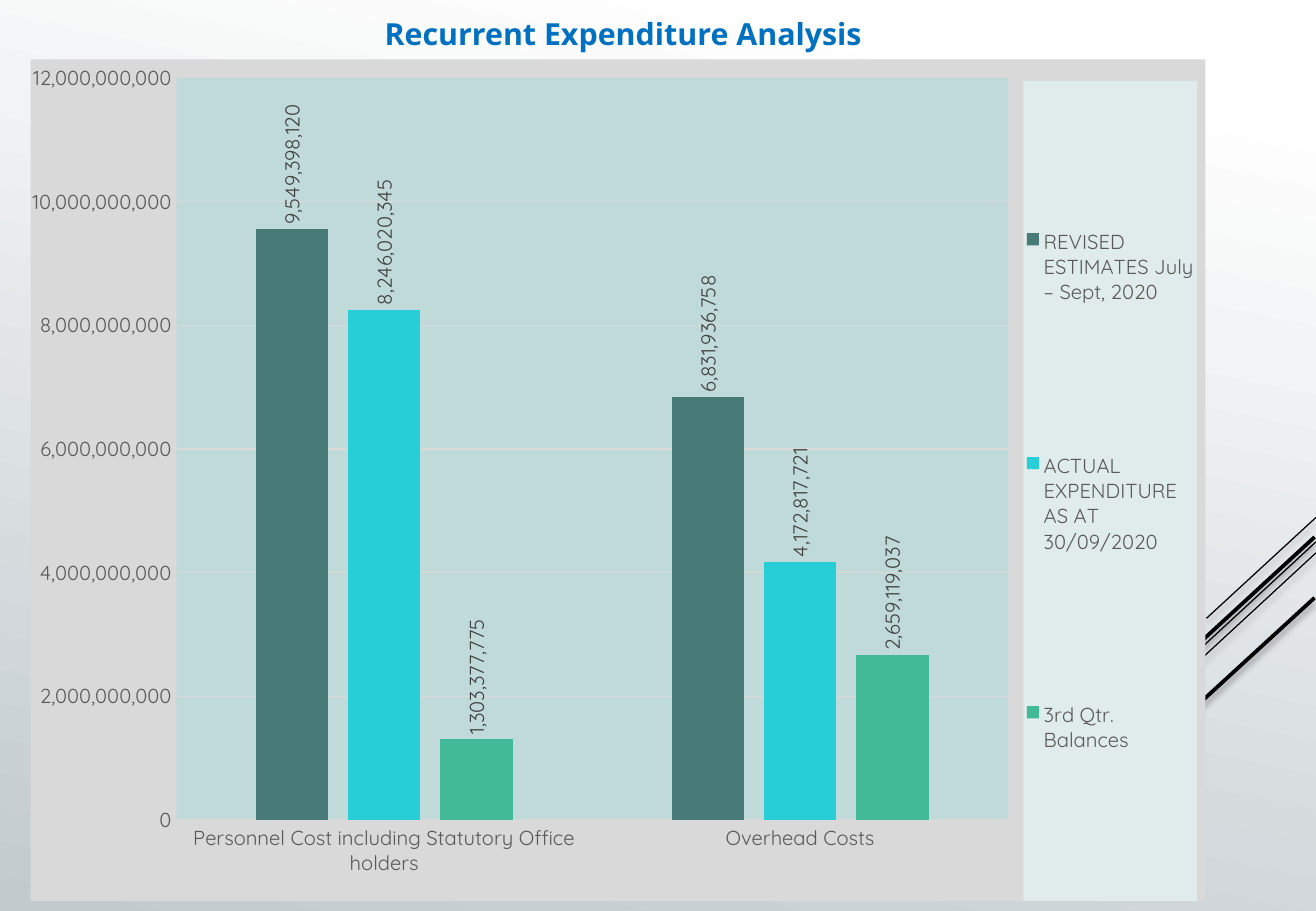
from lxml import etree
from pptx import Presentation
from pptx.chart.data import CategoryChartData
from pptx.dml.color import RGBColor
from pptx.enum.chart import (XL_CHART_TYPE, XL_LABEL_POSITION,
                             XL_LEGEND_POSITION, XL_TICK_MARK)
from pptx.enum.shapes import MSO_CONNECTOR
from pptx.oxml import parse_xml
from pptx.oxml.ns import nsdecls, qn
from pptx.util import Cm, Pt

COLUMNS = XL_CHART_TYPE.COLUMN_CLUSTERED
OUTSIDE_END = XL_LABEL_POSITION.OUTSIDE_END
LEGEND_RIGHT = XL_LEGEND_POSITION.RIGHT
NO_TICK = XL_TICK_MARK.NONE
STRAIGHT = MSO_CONNECTOR.STRAIGHT

COLORS = {k: RGBColor.from_string(v) for k, v in {
    "white": "FFFFFF", "mist": "C2CACE", "black": "000000",
    "title": "0070C0", "axis_text": "595959", "label_text": "404040",
    "rule": "D9D9D9", "plot": "C0DAD9", "legend": "E0ECEB",
    "revised": "487B78", "actual": "27CED7", "balance": "42BA97",
}.items()}
CHART_FONT = "Quicksand"
NUMBER_FORMAT = "#,##0"


def set_font(font, size, color, name=CHART_FONT, bold=False):
    font.size, font.name, font.bold = Pt(size), name, bold
    font.color.rgb = COLORS[color]


def add_text(slide, text, left, top, width, height, **fmt):
    tf = slide.shapes.add_textbox(Cm(left), Cm(top), Cm(width), Cm(height)).text_frame
    tf.word_wrap = True
    r = tf.paragraphs[0].add_run()
    r.text = text
    set_font(r.font, **fmt)


prs = Presentation()
prs.slide_width, prs.slide_height = Cm(27.51), Cm(19.05)
slide = prs.slides.add_slide(prs.slide_layouts[6])

# Background
fill = slide.background.fill
fill.gradient()
fill.gradient_angle = 258
for stop, position, color in zip(fill.gradient_stops, (0.1, 1), ("white", "mist")):
    stop.position = position
    stop.color.rgb = COLORS[color]

# Diagonal lines at the right edge: x1, y1, x2, y2, weight
diagonals = [
    (27.51, 10.82, 25.22, 12.93, 0.75),
    (27.51, 11.33, 20.07, 18.21, 0.75),
    (27.51, 11.56, 22.78, 15.93, 0.75),
    (27.48, 11.23, 23.16, 15.21, 2.25),
    (27.48, 12.5, 24.33, 15.39, 2.25),
]
for *ends, weight in diagonals:
    line = slide.shapes.add_connector(STRAIGHT, *map(Cm, ends))
    line.line.color.rgb = COLORS["black"]
    line.line.width = Pt(weight)
    line._element.spPr.append(parse_xml(
        f'<a:effectLst {nsdecls("a")}><a:outerShdw blurRad="50800" dist="38100" '
        'dir="5400000" rotWithShape="0"><a:srgbClr val="000000">'
        '<a:alpha val="35000"/></a:srgbClr></a:outerShdw></a:effectLst>'))

add_text(slide, "Recurrent Expenditure Analysis", 7.79, 0.2, 12.53, 1.02,
         size=18, color="title", name="Noto Sans", bold=True)

# Chart
series = [
    ("REVISED ESTIMATES July – Sept, 2020", (9549398120, 6831936758), "revised"),
    ("ACTUAL EXPENDITURE AS AT 30/09/2020", (8246020345, 4172817721), "actual"),
    ("3rd Qtr. Balances", (1303377775, 2659119037), "balance"),
]
data = CategoryChartData(number_format=NUMBER_FORMAT)
data.categories = ["Personnel Cost including Statutory Office holders", "Overhead Costs"]
for name, values, _ in series:
    data.add_series(name, values)
chart = slide.shapes.add_chart(COLUMNS, Cm(0.64), Cm(1.24), Cm(24.56), Cm(17.6), data).chart
set_font(chart.font, 10, "black")
chart.has_title = False

plot = chart.plots[0]
plot.gap_width, plot.overlap = 219, -27
plot.vary_by_categories = False
for ser, (_, _, color) in zip(plot.series, series):
    ser.format.fill.solid()
    ser.format.fill.fore_color.rgb = COLORS[color]
    labels = ser.data_labels
    labels.show_value = True
    labels.position = OUTSIDE_END
    labels.number_format = NUMBER_FORMAT
    labels.number_format_is_linked = False
    set_font(labels.font, 12, "label_text")
    body = labels._element.find(qn("c:txPr")).find(qn("a:bodyPr"))
    body.set("rot", "-5400000")
    body.set("vert", "horz")

cat_axis, val_axis = chart.category_axis, chart.value_axis
for axis in (cat_axis, val_axis):
    axis.major_tick_mark = axis.minor_tick_mark = NO_TICK
    set_font(axis.tick_labels.font, 12, "axis_text")
val_axis.minimum_scale, val_axis.maximum_scale = 0, 12_000_000_000
val_axis.major_unit = 2_000_000_000
val_axis.tick_labels.number_format = NUMBER_FORMAT
val_axis.tick_labels.number_format_is_linked = False
val_axis.format.line.fill.background()
for rule in (cat_axis.format.line, val_axis.major_gridlines.format.line):
    rule.color.rgb = COLORS["rule"]
    rule.width = Pt(0.75)

chart.has_legend = True
legend = chart.legend
legend.position = LEGEND_RIGHT
legend.include_in_layout = False
set_font(legend.font, 12, "axis_text")

# Panel fills and fixed places inside the chart
chart_el = chart._chartSpace.find(qn("c:chart"))
plot_el = chart_el.find(qn("c:plotArea"))
legend_el = legend._element
panels = {}
for color in ("rule", "plot", "legend"):
    panels[color] = parse_xml(
        f'<c:spPr {nsdecls("c", "a")}><a:solidFill><a:srgbClr val="{COLORS[color]}"/>'
        '</a:solidFill><a:ln><a:noFill/></a:ln></c:spPr>')
chart_el.addnext(panels["rule"])
plot_el.append(panels["plot"])
legend_el.find(qn("c:txPr")).addprevious(panels["legend"])

for parent, index, box in ((plot_el, 0, (0.124, 0.022, 0.708, 0.882)),
                           (legend_el, 1, (0.845, 0.026, 0.148, 0.974))):
    for old in parent.findall(qn("c:layout")):
        parent.remove(old)
    layout = etree.Element(qn("c:layout"))
    manual = etree.SubElement(layout, qn("c:manualLayout"))
    settings = [("xMode", "edge"), ("yMode", "edge"), *zip("xywh", box)]
    if parent is plot_el:
        settings.insert(0, ("layoutTarget", "inner"))
    for tag, value in settings:
        etree.SubElement(manual, qn(f"c:{tag}")).set("val", str(value))
    parent.insert(index, layout)

prs.save("out.pptx")
